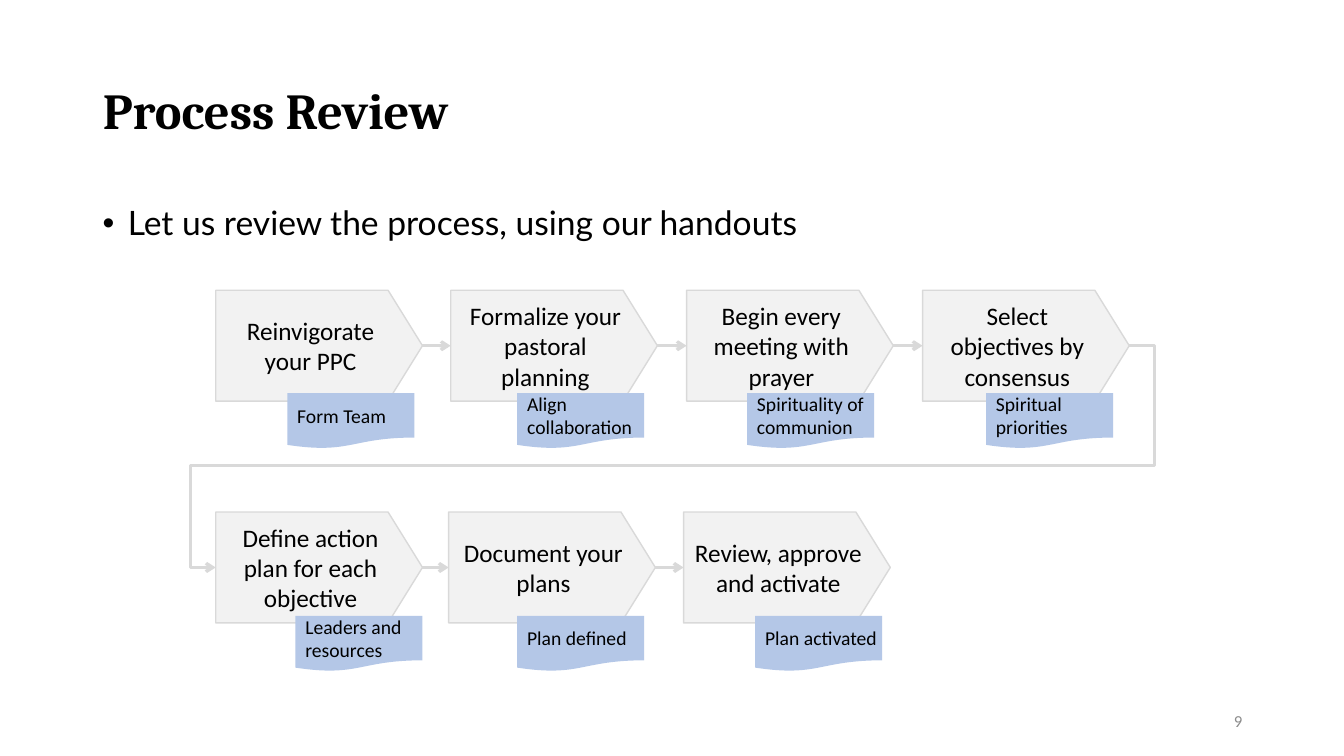
from lxml import etree
from pptx import Presentation
from pptx.dml.color import RGBColor
from pptx.enum.shapes import MSO_CONNECTOR as CONNECTOR, MSO_SHAPE as SHAPE
from pptx.enum.text import MSO_ANCHOR as ANCHOR, MSO_AUTO_SIZE as AUTO_SIZE, PP_ALIGN as ALIGN
from pptx.oxml.ns import qn
from pptx.util import Inches, Pt


def color(value):
    return RGBColor.from_string(value)


def write(shape, text, size, font_name="Calibri", text_color="000000",
          align=ALIGN.LEFT, anchor=ANCHOR.MIDDLE):
    frame = shape.text_frame
    frame.word_wrap = True
    frame.auto_size = AUTO_SIZE.NONE
    frame.vertical_anchor = anchor
    paragraph = frame.paragraphs[0]
    paragraph.alignment = align
    run = paragraph.add_run()
    run.text = text
    run.font.size = Pt(size)
    run.font.name = font_name
    run.font.color.rgb = color(text_color)
    return paragraph


presentation = Presentation()
presentation.slide_width, presentation.slide_height = Inches(13.33), Inches(7.5)
slide = presentation.slides.add_slide(presentation.slide_layouts[5])
shapes = slide.shapes

# Title
title = shapes.title
title.left, title.top = Inches(0.92), Inches(0.4)
title.width, title.height = Inches(10.75), Inches(1.45)
heading = write(title, "Process Review", 36, "Cambria")
heading.line_spacing = 0.9
heading.runs[0].font.bold = True

# Bulleted introduction
intro = shapes.add_textbox(Inches(0.92), Inches(2), Inches(11.5), Inches(0.59))
bullet = write(intro, "Let us review the process, using our handouts", 24, "Lato",
               anchor=ANCHOR.TOP)
bullet.line_spacing = 0.9
properties = bullet._p.get_or_add_pPr()
properties.set("marL", str(Inches(0.25)))
properties.set("indent", str(Inches(-0.25)))
etree.SubElement(properties, qn("a:buFont"), typeface="Arial")
etree.SubElement(properties, qn("a:buChar"), char="•")

# Slide number
number = shapes.add_textbox(Inches(9.42), Inches(6.95), Inches(3), Inches(0.4))
write(number, "9", 12, text_color="8C8C8C", align=ALIGN.RIGHT)

# Process rows: top, output top, then (left, step, output left, output)
rows = [
    (2.88, 3.9, [
        (2.14, "Reinvigorate your PPC", 2.85, "Form Team"),
        (4.47, "Formalize your pastoral planning", 5.13, "Align collaboration"),
        (6.81, "Begin every meeting with prayer", 7.41, "Spirituality of communion"),
        (9.15, "Select objectives by consensus", 9.78, "Spiritual priorities"),
    ]),
    (5.08, 6.11, [
        (2.14, "Define action plan for each objective", 2.93, "Leaders and resources"),
        (4.45, "Document your plans", 5.13, "Plan defined"),
        (6.78, "Review, approve and activate", 7.49, "Plan activated"),
    ]),
]
steps = []
for step_top, output_top, items in rows:
    for step_left, step_text, output_left, output_text in items:
        step = shapes.add_shape(SHAPE.PENTAGON, Inches(step_left), Inches(step_top),
                                Inches(2.05), Inches(1.1))
        step.adjustments[0] = 0.31
        step.shadow.inherit = False
        step.fill.solid()
        step.fill.fore_color.rgb = color("F2F2F2")
        step.line.color.rgb = color("D9D9D9")
        step.line.width = Pt(1)
        write(step, step_text, 18, align=ALIGN.CENTER)
        steps.append(step)

        output = shapes.add_shape(SHAPE.FLOWCHART_DOCUMENT, Inches(output_left),
                                  Inches(output_top), Inches(1.26), Inches(0.55))
        output.shadow.inherit = False
        output.fill.solid()
        output.fill.fore_color.rgb = color("B4C7E7")
        output.line.fill.background()
        write(output, output_text, 14)
        output.text_frame.margin_right = Inches(0.04)

# Arrows from each step to the next; the one between the rows bends
for step, following in zip(steps, steps[1:]):
    same_row = step.top == following.top
    kind = CONNECTOR.STRAIGHT if same_row else CONNECTOR.ELBOW
    arrow = shapes.add_connector(kind, 0, 0, 0, 0)
    arrow.begin_connect(step, 3)
    arrow.end_connect(following, 1)
    arrow.line.color.rgb = color("D9D9D9")
    arrow.line.width = Pt(2.25)
    etree.SubElement(arrow.line._get_or_add_ln(), qn("a:tailEnd"), type="arrow")
    etree.SubElement(arrow._element.spPr, qn("a:effectLst"))
    if not same_row:
        geometry = arrow._element.spPr.find(qn("a:prstGeom"))
        geometry.set("prst", "bentConnector5")
        guides = geometry.get_or_add_avLst()
        for index, value in enumerate([-2800, 54100, 102800], start=1):
            etree.SubElement(guides, qn("a:gd"), name=f"adj{index}", fmla=f"val {value}")

presentation.save("out.pptx")
